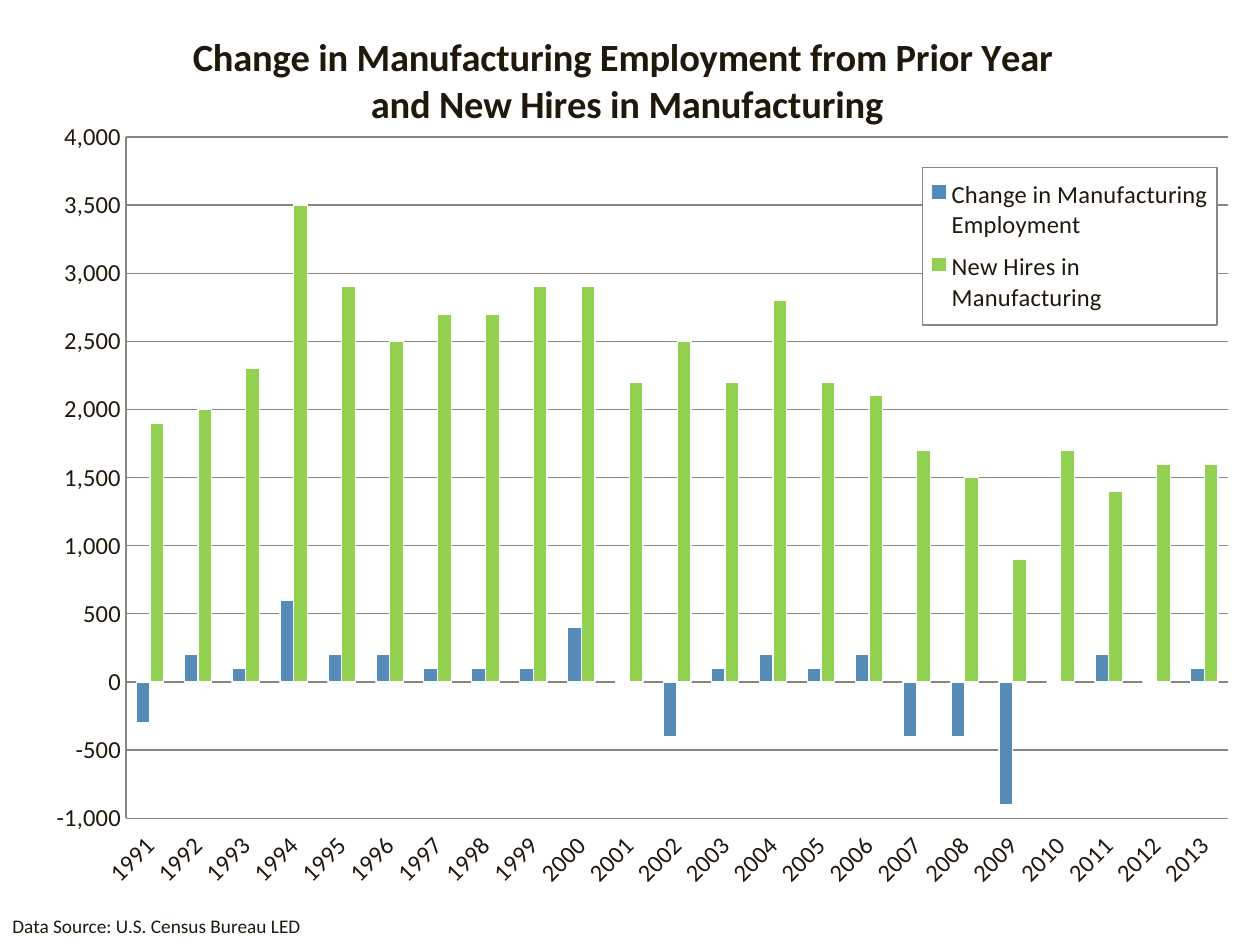
from lxml.etree import fromstring
from pptx import Presentation
from pptx.chart.data import CategoryChartData
from pptx.dml.color import RGBColor
from pptx.enum.chart import XL_CHART_TYPE, XL_LEGEND_POSITION, XL_TICK_LABEL_POSITION, XL_TICK_MARK
from pptx.oxml.ns import qn
from pptx.util import Inches, Pt

FONT = "Calibri"
COLORS = {"text": "20180A", "change": "548BB7", "hires": "92D050", "line": "868686", "paper": "FFFFFF"}
TITLE = ["Change in Manufacturing Employment from Prior Year ", "and New Hires in Manufacturing"]
SOURCE = "Data Source: U.S. Census Bureau LED"
YEARS = [str(year) for year in range(1991, 2014)]
SERIES = [
    ("Change in Manufacturing Employment", "change",
     [-300, 200, 100, 600, 200, 200, 100, 100, 100, 400, 0, -400,
      100, 200, 100, 200, -400, -400, -900, 0, 200, 0, 100]),
    ("New Hires in Manufacturing", "hires",
     [1900, 2000, 2300, 3500, 2900, 2500, 2700, 2700, 2900, 2900, 2200, 2500,
      2200, 2800, 2200, 2100, 1700, 1500, 900, 1700, 1400, 1600, 1600]),
]
CHART_NS = "http://schemas.openxmlformats.org/drawingml/2006/chart"
DRAWING_NS = "http://schemas.openxmlformats.org/drawingml/2006/main"


def color(name):
    return RGBColor.from_string(COLORS[name])


def style_font(font, size, bold=False):
    font.name = FONT
    font.size = Pt(size)
    font.bold = bold
    font.color.rgb = color("text")


def style_line(line, name, width=0.75):
    line.color.rgb = color(name)
    line.width = Pt(width)


def place(element, index, inner=False, **position):
    for old in element.findall(qn("c:layout")):
        element.remove(old)
    target = '<c:layoutTarget val="inner"/>' if inner else ""
    modes = "".join(f'<c:{key}Mode val="edge"/>' for key in ("x", "y"))
    values = "".join(f'<c:{key} val="{value}"/>' for key, value in position.items())
    element.insert(index, fromstring(
        f'<c:layout xmlns:c="{CHART_NS}"><c:manualLayout>{target}{modes}{values}</c:manualLayout></c:layout>'))


def add_title(chart):
    chart.has_title = True
    title = chart.chart_title
    frame = title.text_frame
    frame.text = "\n".join(TITLE)
    for paragraph in frame.paragraphs:
        style_font(paragraph.font, 22, True)
        for run in paragraph.runs:
            style_font(run.font, 22, True)
    title.include_in_layout = False
    place(title._element, 1, x=0.15, y=0.03)


def add_legend(chart):
    chart.has_legend = True
    legend = chart.legend
    legend.position = XL_LEGEND_POSITION.RIGHT
    legend.include_in_layout = True
    style_font(legend.font, 14)
    element = legend._element
    place(element, 1, x=0.732, y=0.177, w=0.234, h=0.167)
    element.find(qn("c:overlay")).addnext(fromstring(
        f'<c:spPr xmlns:c="{CHART_NS}" xmlns:a="{DRAWING_NS}">'
        f'<a:solidFill><a:srgbClr val="{COLORS["paper"]}"/></a:solidFill>'
        f'<a:ln w="9525"><a:solidFill><a:srgbClr val="{COLORS["line"]}"/></a:solidFill></a:ln></c:spPr>'))


def style_axes(chart):
    for axis in (chart.category_axis, chart.value_axis):
        axis.major_tick_mark = axis.minor_tick_mark = XL_TICK_MARK.NONE
        style_font(axis.tick_labels.font, 14)
        style_line(axis.format.line, "line")
    years, values = chart.category_axis, chart.value_axis
    years.tick_label_position = XL_TICK_LABEL_POSITION.LOW
    years._element.find(qn("c:txPr")).find(qn("a:bodyPr")).set("rot", "-2700000")
    values.minimum_scale, values.maximum_scale, values.major_unit = -1000, 4000, 500
    values.tick_labels.number_format = "#,##0"
    values.tick_labels.number_format_is_linked = False
    values.has_major_gridlines = True
    style_line(values.major_gridlines.format.line, "line")


def add_chart(slide, width, height):
    data = CategoryChartData()
    data.categories = YEARS
    for name, _, values in SERIES:
        data.add_series(name, values)
    chart = slide.shapes.add_chart(XL_CHART_TYPE.COLUMN_CLUSTERED, 0, 0, width, height, data).chart
    style_font(chart.font, 18)
    plot = chart.plots[0]
    plot.gap_width = 150
    plot.vary_by_categories = False
    for series, (_, shade, _) in zip(plot.series, SERIES):
        series.invert_if_negative = False
        series.format.fill.solid()
        series.format.fill.fore_color.rgb = color(shade)
        style_line(series.format.line, "paper")
    style_axes(chart)
    add_title(chart)
    add_legend(chart)
    place(chart._chartSpace.chart.plotArea, 0, inner=True, x=0.1, y=0.145, w=0.875, h=0.721)


def add_source(slide):
    box = slide.shapes.add_textbox(Inches(0), Inches(7.21), Inches(5.36), Inches(0.29))
    frame = box.text_frame
    frame.word_wrap = True
    frame.text = SOURCE
    style_font(frame.paragraphs[0].runs[0].font, 11)


def main():
    presentation = Presentation()
    presentation.slide_width, presentation.slide_height = Inches(10), Inches(7.5)
    slide = presentation.slides.add_slide(presentation.slide_layouts[6])
    add_chart(slide, presentation.slide_width, presentation.slide_height)
    add_source(slide)
    presentation.save("out.pptx")


if __name__ == "__main__":
    main()
